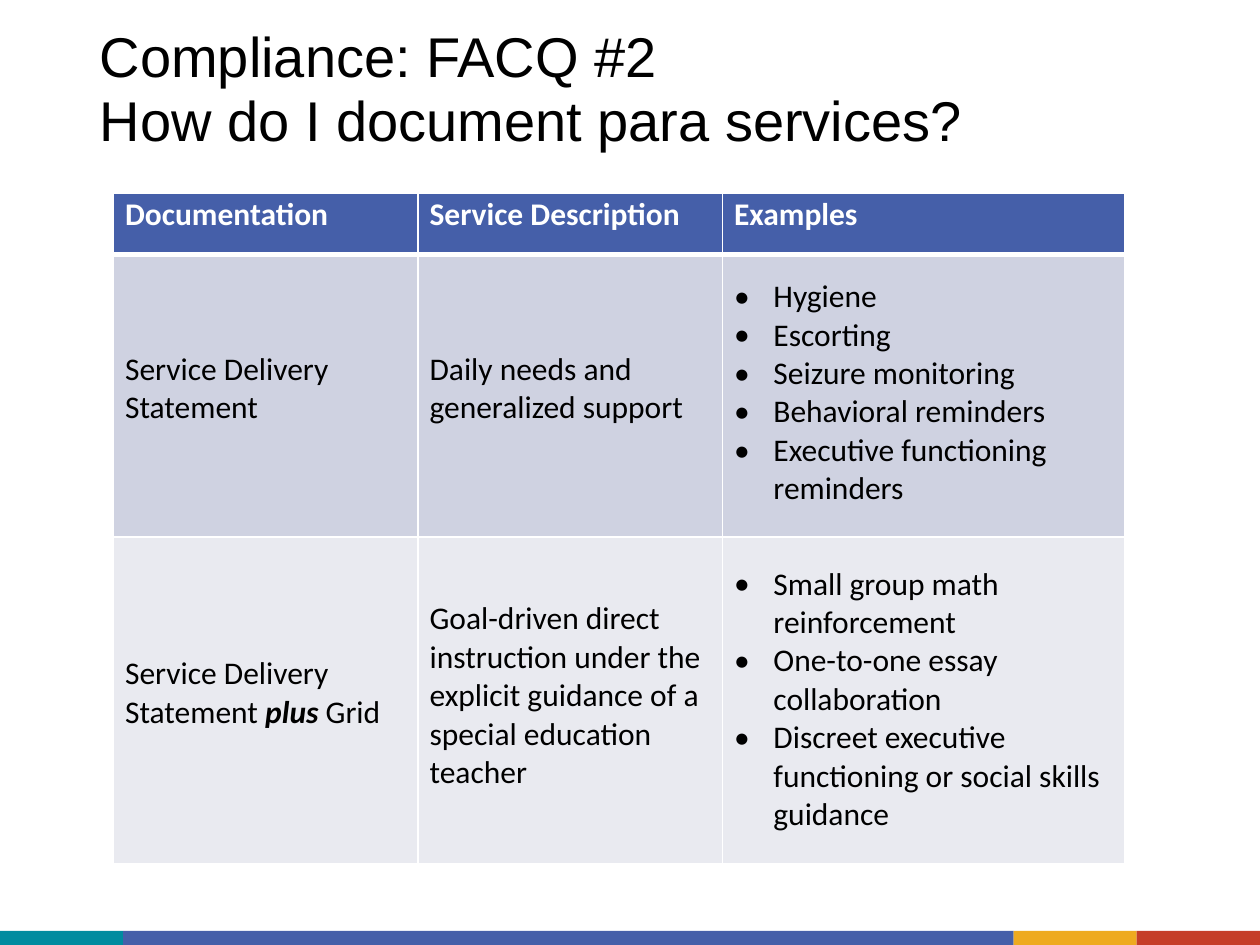
import pptx
import pptx.dml.color
import pptx.enum.shapes
import pptx.enum.text
import pptx.oxml
import pptx.oxml.ns
import pptx.util
from lxml import etree

Pt = pptx.util.Pt


def color(value):
    return pptx.dml.color.RGBColor.from_string(value)


def add_borders(cell, widths):
    properties = cell._tc.get_or_add_tcPr()
    for position, (side, width) in enumerate(widths.items()):
        line = pptx.oxml.parse_xml(
            f'<a:{side} {pptx.oxml.ns.nsdecls("a")} w="{Pt(width)}"><a:solidFill>'
            f'<a:srgbClr val="FFFFFF"/></a:solidFill></a:{side}>')
        properties.insert(position, line)


presentation = pptx.Presentation()
presentation.slide_width, presentation.slide_height = Pt(720), Pt(540)
slide = presentation.slides.add_slide(presentation.slide_layouts[6])

# Coloured band along the bottom edge
left = 0
for width, fill in [(70.4, "008B9F"), (508.8, "455FA9"), (70.4, "EEAA1F"), (70.4, "C53E28")]:
    shape = slide.shapes.add_shape(
        pptx.enum.shapes.MSO_SHAPE.RECTANGLE, Pt(left), Pt(532), Pt(width), Pt(8))
    shape.shadow.inherit = False
    shape.fill.solid()
    shape.fill.fore_color.rgb = color(fill)
    shape.line.fill.background()
    left += width

# Title
title = slide.shapes.add_textbox(Pt(55.5), Pt(14.4), Pt(520), Pt(74))
frame = title.text_frame
frame_format = {"word_wrap": True, "margin_left": Pt(1.5), "margin_top": 0,
                "margin_right": 0, "margin_bottom": 0}
for name, value in frame_format.items():
    setattr(frame, name, value)
frame.text = "Compliance: FACQ #2\nHow do I document para services?"
title_font = {"name": "Arial", "size": Pt(32)}
for paragraph in frame.paragraphs:
    paragraph.line_spacing = Pt(36.5)
    for name, value in title_font.items():
        setattr(paragraph.font, name, value)
    paragraph.font.color.rgb = color("000000")

# Table content: each cell has a top margin, a right margin and paragraphs
header = [(1.5, 0, [text]) for text in ("Documentation", "Service Description", "Examples")]
daily_needs = [
    (54.6, 0, ["Service Delivery Statement"]),
    (54.6, 0, ["Daily needs and generalized support"]),
    (13.1, 13, ["Hygiene", "Escorting", "Seizure monitoring", "Behavioral reminders",
                "Executive functioning reminders"]),
]
instruction = [
    (67.3, 0, ["Service Delivery Statement *plus* Grid"]),
    (36, 0, ["Goal-driven direct instruction under the explicit guidance of a "
             "special education teacher"]),
    (16.1, 10, ["Small group math reinforcement", "One-to-one essay collaboration",
                "Discreet executive functioning or social skills guidance"]),
]
# Row height, fill, text colour, top and bottom border widths, cells
rows = [
    (35.3, "455FA9", "FFFFFF", 1, 3, header),
    (161.3, "CFD2E1", "000000", 3, 1, daily_needs),
    (186.5, "E9EAF0", "000000", 1, 1, instruction),
]
column_widths = [174, 174, 229.8]

table = slide.shapes.add_table(
    len(rows), len(column_widths), Pt(65), Pt(110.2),
    Pt(sum(column_widths)), Pt(sum(row[0] for row in rows))).table
table.first_row = False
table.horz_banding = False
for column, width in zip(table.columns, column_widths):
    column.width = Pt(width)

for row_index, (height, fill, text_color, top, bottom, cells) in enumerate(rows):
    table.rows[row_index].height = Pt(height)
    for column_index, (top_margin, right_margin, texts) in enumerate(cells):
        cell = table.cell(row_index, column_index)
        cell_format = {"margin_left": Pt(6.5), "margin_top": Pt(top_margin),
                       "margin_right": Pt(right_margin), "margin_bottom": 0,
                       "vertical_anchor": pptx.enum.text.MSO_ANCHOR.TOP}
        for name, value in cell_format.items():
            setattr(cell, name, value)
        cell.fill.solid()
        cell.fill.fore_color.rgb = color(fill)
        add_borders(cell, {"lnL": 1, "lnR": 1, "lnT": top, "lnB": bottom})

        for index, text in enumerate(texts):
            frame = cell.text_frame
            paragraph = frame.add_paragraph() if index else frame.paragraphs[0]
            # Bulleted examples
            if row_index > 0 and column_index == 2:
                properties = paragraph._p.get_or_add_pPr()
                properties.set("marL", str(Pt(22.5)))
                properties.set("indent", str(Pt(-22.5)))
                for tag, key, value in [("a:buFont", "typeface", "Calibri"),
                                        ("a:buChar", "char", "•")]:
                    bullet = etree.SubElement(properties, pptx.oxml.ns.qn(tag))
                    bullet.set(key, value)
            # Words between asterisks are bold italic
            for part, words in enumerate(text.split("*")):
                run = paragraph.add_run()
                run.text = words
                emphasis = part % 2 == 1
                run_font = {"name": "Calibri", "size": Pt(18),
                            "bold": emphasis or row_index == 0, "italic": emphasis}
                for name, value in run_font.items():
                    setattr(run.font, name, value)
                run.font.color.rgb = color(text_color)

presentation.save("out.pptx")
